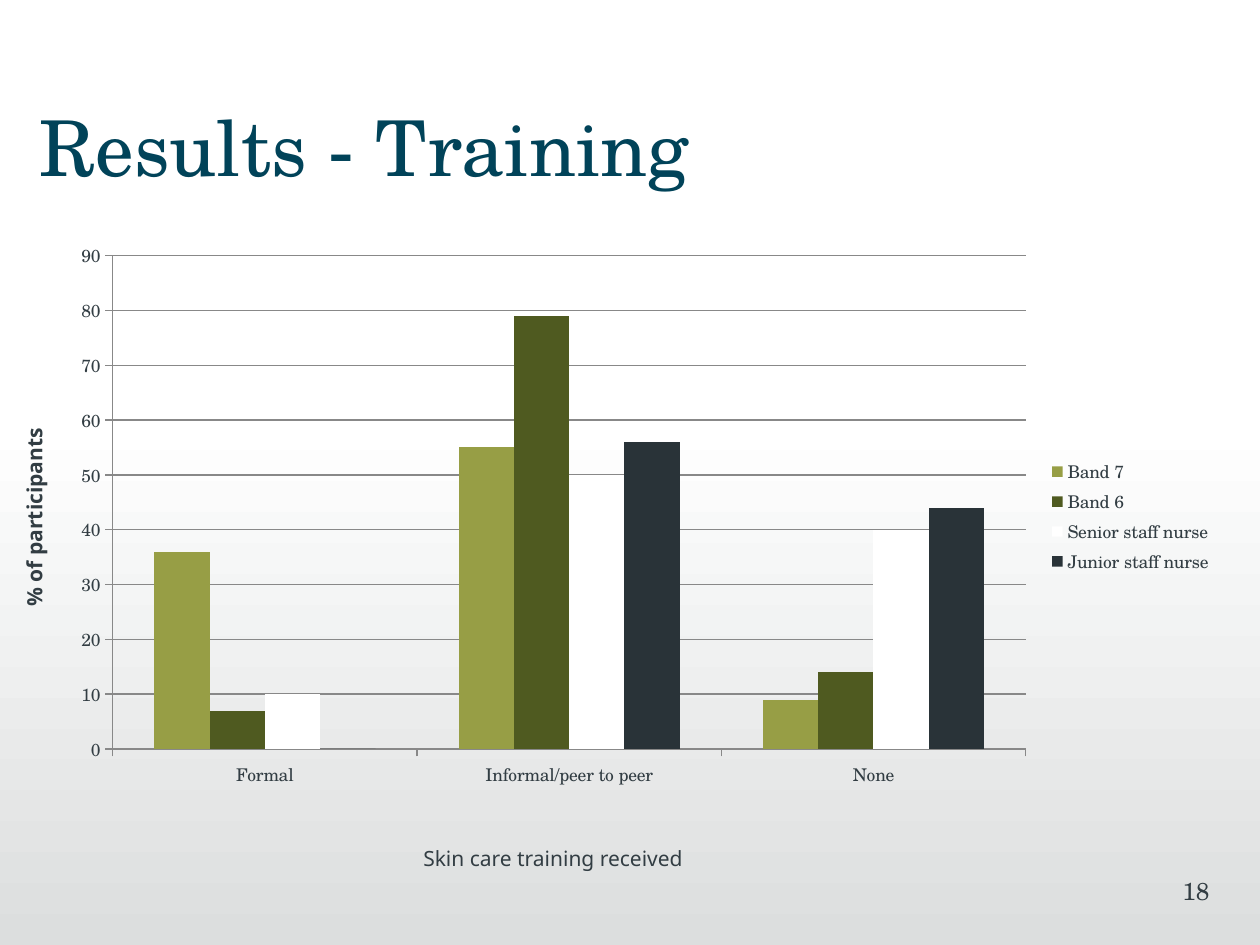
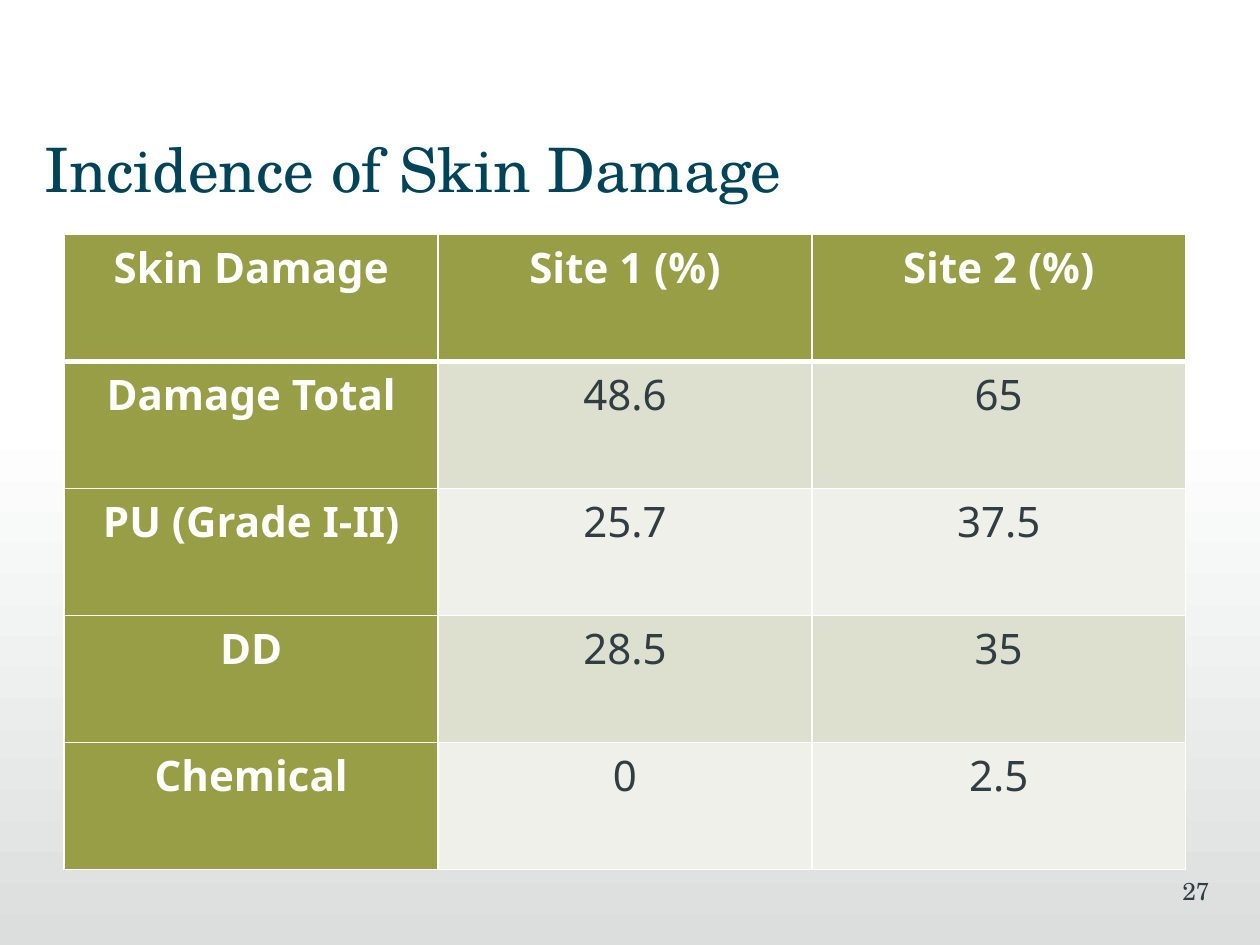
from pptx import Presentation
from pptx.chart.data import CategoryChartData
from pptx.dml.color import RGBColor
from pptx.enum.chart import XL_CHART_TYPE, XL_LEGEND_POSITION, XL_TICK_MARK
from pptx.enum.shapes import MSO_SHAPE
from pptx.enum.text import MSO_ANCHOR, MSO_AUTO_SIZE, PP_ALIGN
from pptx.oxml import parse_xml
from pptx.oxml.ns import nsdecls
from pptx.util import Inches, Pt

SERIF, SANS = "TeX Gyre Schola", "Noto Sans"
TEAL, INK, WHITE, OLIVE = "014359", "323D43", "FFFFFF", "979E45"
paint = RGBColor.from_string

deck = Presentation()
deck.slide_width, deck.slide_height = Inches(10), Inches(7.5)
unit = deck.slide_width / 100


def grid(*cells):
    return [round(cell * unit) for cell in cells]


def style(font, face, size, hue, bold=False):
    font.name, font.size, font.bold = face, Pt(size), bold
    font.color.rgb = paint(hue)


pages = [
    ("Results - Training", 44, (3.1, 7.4), "18"),
    ("Incidence of Skin Damage", 35, (3.5, 9.9), "27"),
]
layout = deck.slide_layouts[5]
slides = []
for head, size, spot, number in pages:
    slide = deck.slides.add_slide(layout)
    slides.append(slide)
    title = slide.shapes.title
    title.left, title.top, title.width, title.height = grid(*spot, 92.9, 7.1)
    frame = title.text_frame
    frame.text = head
    frame.margin_left = 0
    frame.vertical_anchor = MSO_ANCHOR.TOP
    frame.auto_size = MSO_AUTO_SIZE.NONE
    line = frame.paragraphs[0]
    line.alignment = PP_ALIGN.LEFT
    style(line.font, SERIF, size, TEAL)

    frame = slide.shapes.add_textbox(*grid(75.2, 69, 20.8, 5)).text_frame
    frame.text = number
    frame.word_wrap = True
    frame.margin_right = 0
    line = frame.paragraphs[0]
    line.alignment = PP_ALIGN.RIGHT
    style(line.font, SERIF, 14, INK)

train, damage = slides

band = train.shapes.add_shape(MSO_SHAPE.RECTANGLE, *grid(-0.9, 33.3, 100.9, 41.7))
band.shadow.inherit = False
band.line.fill.background()
band.fill.gradient()
band.fill.gradient_angle = 270
for stop, hue in zip(band.fill.gradient_stops, (WHITE, "DCDEDE")):
    stop.color.rgb = paint(hue)
band.element.nvSpPr.cNvPr.set("id", "99")
layout.shapes.element.insert(2, band.element)

data = CategoryChartData()
data.categories = ["Formal", "Informal/peer to peer", "None"]
series = [
    ("Band 7", (36, 55, 9), OLIVE),
    ("Band 6", (7, 79, 14), "4F5A20"),
    ("Senior staff nurse", (10, 50, 40), WHITE),
    ("Junior staff nurse", (0, 56, 44), "293338"),
]
for name, values, hue in series:
    data.add_series(name, values)
chart = train.shapes.add_chart(
    XL_CHART_TYPE.COLUMN_CLUSTERED, *grid(4.3, 18.5, 92.9, 45), data
).chart
style(chart.font, SERIF, 10, INK)
chart.has_title = False
chart.has_legend = True
chart.legend.position = XL_LEGEND_POSITION.RIGHT
chart.legend.include_in_layout = False
plot = chart.plots[0]
plot.gap_width, plot.overlap = 150, 0
plot.vary_by_categories = False
for bar, (name, values, hue) in zip(plot.series, series):
    bar.format.fill.solid()
    bar.format.fill.fore_color.rgb = paint(hue)
    bar.invert_if_negative = False
scale = chart.value_axis
scale.minimum_scale, scale.maximum_scale, scale.major_unit = 0, 90, 10
scale.has_major_gridlines = True
for axis in (scale, chart.category_axis):
    axis.major_tick_mark = XL_TICK_MARK.OUTSIDE
    axis.minor_tick_mark = XL_TICK_MARK.NONE
for item in (scale, chart.category_axis, scale.major_gridlines):
    item.format.line.width = Pt(0.75)
    item.format.line.color.rgb = paint("888888")
area = chart.element.chart.plotArea
for old in area.findall("{*}layout"):
    area.remove(old)
shares = zip("xywh", (0.05, 0.04, 0.78, 0.87))
marks = "".join(f'<c:{key} val="{share}"/>' for key, share in shares)
area.insert(0, parse_xml(
    f'<c:layout {nsdecls("c")}><c:manualLayout><c:layoutTarget val="inner"/>'
    f'<c:xMode val="edge"/><c:yMode val="edge"/>{marks}</c:manualLayout></c:layout>'
))

labels = [
    ("Skin care training received", (-0.2, 66.6, 88.2, 3.1), "horz", False),
    ("% of participants", (1.2, 19.4, 4, 43.3), "vert270", True),
]
for text, spot, turn, bold in labels:
    box = train.shapes.add_textbox(*grid(*spot))
    box.element.txBody.bodyPr.set("vert", turn)
    frame = box.text_frame
    frame.text = text
    frame.word_wrap = True
    line = frame.paragraphs[0]
    line.alignment = PP_ALIGN.CENTER
    style(line.font, SANS, 12, INK, bold)

rows = [
    ("Skin Damage", "Site 1 (%)", "Site 2 (%)"),
    ("Damage Total", "48.6", "65"),
    ("PU (Grade I-II)", "25.7", "37.5"),
    ("DD", "28.5", "35"),
    ("Chemical", "0", "2.5"),
]
table = damage.shapes.add_table(5, 3, *grid(5.1, 18.6, 89, 50.4)).table
for r, row in enumerate(rows):
    for c, text in enumerate(row):
        cell = table.cell(r, c)
        lead = r == 0 or c == 0
        cell.text = text
        cell.margin_left = cell.margin_right = Inches(0.07)
        cell.margin_top = cell.margin_bottom = 0
        props = cell._tc.get_or_add_tcPr()
        for side in "LRTB":
            thick = 3 if (r, side) in ((0, "B"), (1, "T")) else 1
            props.append(parse_xml(
                f'<a:ln{side} {nsdecls("a")} w="{Pt(thick)}"><a:solidFill>'
                f'<a:srgbClr val="{WHITE}"/></a:solidFill></a:ln{side}>'
            ))
        cell.fill.solid()
        shade = OLIVE if lead else "DDDFCF" if r % 2 else "EFF0E9"
        cell.fill.fore_color.rgb = paint(shade)
        line = cell.text_frame.paragraphs[0]
        line.alignment = PP_ALIGN.CENTER
        line.line_spacing = 1.07
        style(line.font, SANS, 24, WHITE if lead else INK, lead)

deck.save("out.pptx")
